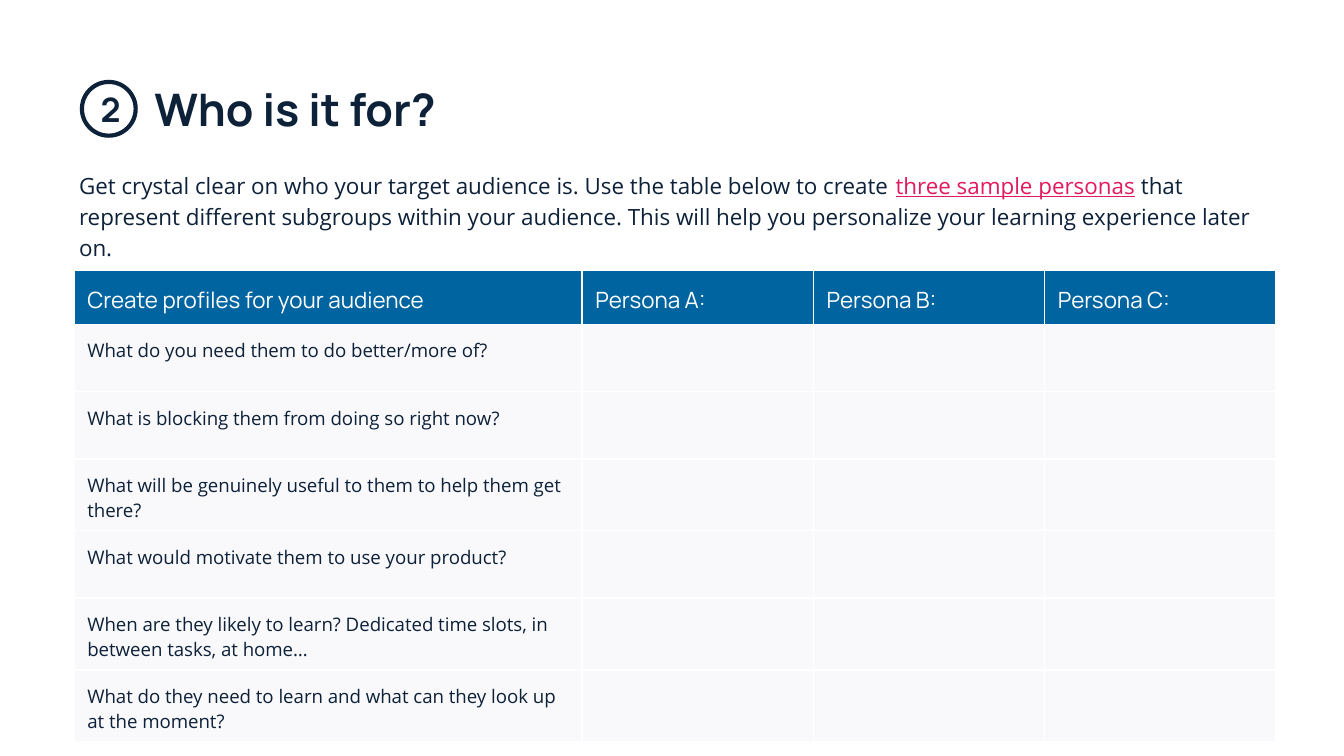
"""Build the audience persona worksheet slide."""
from lxml.etree import SubElement
from pptx import Presentation
from pptx.dml.color import RGBColor
from pptx.enum.shapes import MSO_SHAPE
from pptx.enum.text import MSO_AUTO_SIZE, PP_ALIGN
from pptx.oxml.ns import qn
from pptx.util import Pt

NAVY, PINK, BLUE, PALE, WHITE = "0D2139", "E1195F", "0064A1", "F9F9FB", "FFFFFF"
INSET = Pt(7.2)


def color(value):
    return RGBColor.from_string(value)


def add_run(para, text, font, size, shade=NAVY, bold=False, underline=False):
    span = para.add_run()
    span.text = text
    span.font.name = font
    span.font.size = Pt(size)
    span.font.bold = bold
    span.font.underline = underline
    span.font.color.rgb = color(shade)


deck = Presentation()
deck.slide_width, deck.slide_height = Pt(720), Pt(405)
page = deck.slides.add_slide(deck.slide_layouts[6])

ring = page.shapes.add_shape(MSO_SHAPE.OVAL, Pt(43.9), Pt(43.9), Pt(28.8), Pt(28.8))
ring.shadow.inherit = False
ring.fill.background()
ring.line.color.rgb = color(NAVY)
ring.line.width = Pt(2.25)

paras = []
for left, top, width, height, fit in [
    (75.6, 36.7, 440, 43.9, MSO_AUTO_SIZE.SHAPE_TO_FIT_TEXT),
    (35.3, 82.8, 653, 62.6, MSO_AUTO_SIZE.SHAPE_TO_FIT_TEXT),
    (46.8, 40.3, 22.3, 28.8, MSO_AUTO_SIZE.NONE),
]:
    box = page.shapes.add_textbox(Pt(left), Pt(top), Pt(width), Pt(height))
    frame = box.text_frame
    frame.word_wrap = True
    frame.auto_size = fit
    frame.margin_left = frame.margin_right = INSET
    frame.margin_top = frame.margin_bottom = INSET
    paras.append(frame.paragraphs[0])

title, intro, number = paras
add_run(title, "Who is it for?", "Manrope", 24, bold=True)
number.alignment = PP_ALIGN.CENTER
add_run(number, "2", "Manrope", 18, bold=True)

intro.line_spacing = 1.15
intro.space_after = Pt(12)
add_run(intro, "Get crystal clear on who your target audience is. Use the table below to create ", "Open Sans", 12)
add_run(intro, "three sample personas", "Open Sans", 12, PINK, underline=True)
add_run(
    intro,
    " that represent different subgroups within your audience. "
    "This will help you personalize your learning experience later on.",
    "Open Sans",
    12,
)

headings = ["Create profiles for your audience", "Persona A:", "Persona B:", "Persona C:"]
questions = [
    "What do you need them to do better/more of?",
    "What is blocking them from doing so right now?",
    "What will be genuinely useful to them to help them get there?",
    "What would motivate them to use your product?",
    "When are they likely to learn? Dedicated time slots, in between tasks, at home…",
    "What do they need to learn and what can they look up at the moment?",
]
rows = [headings] + [[question, "", "", ""] for question in questions]
widths = [272.2, 123.9, 123.9, 123.9]
heights = [28.4, 36, 36, 38.5, 36, 38.5, 38.5]

table = page.shapes.add_table(
    len(rows), len(widths), Pt(39.6), Pt(145), Pt(sum(widths)), Pt(sum(heights))
).table
for column, width in zip(table.columns, widths):
    column.width = Pt(width)

for row, height, texts in zip(table.rows, heights, rows):
    row.height = Pt(height)
    header = texts is headings
    for cell, text in zip(row.cells, texts):
        cell.margin_left = cell.margin_right = INSET
        cell.margin_top = cell.margin_bottom = INSET
        properties = cell._tc.get_or_add_tcPr()
        for side in ("a:lnL", "a:lnR", "a:lnT", "a:lnB"):
            border = SubElement(properties, qn(side), w=str(Pt(0.75)))
            SubElement(SubElement(border, qn("a:solidFill")), qn("a:srgbClr"), val=WHITE)
        cell.fill.solid()
        cell.fill.fore_color.rgb = color(BLUE if header else PALE)
        para = cell.text_frame.paragraphs[0]
        if header:
            add_run(para, text, "Manrope", 12, WHITE)
        elif text:
            add_run(para, text, "Open Sans", 10)

deck.save("out.pptx")
